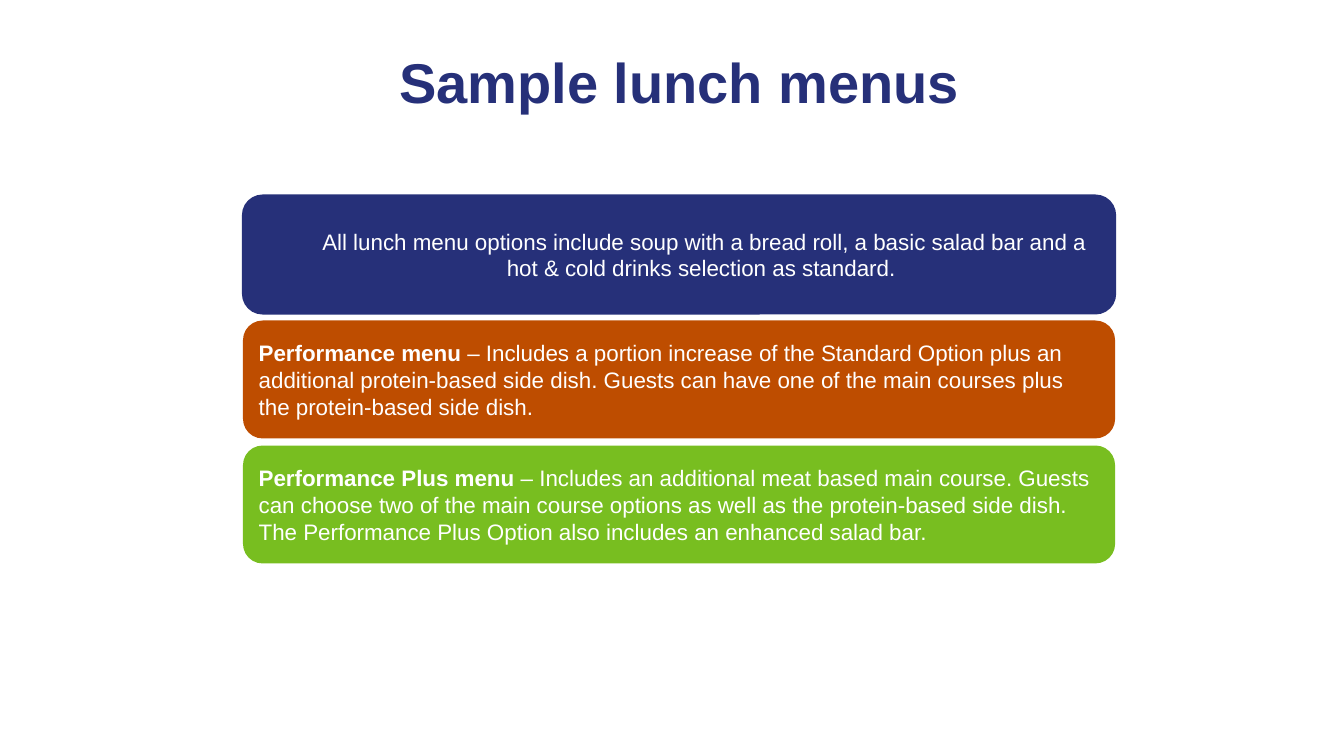
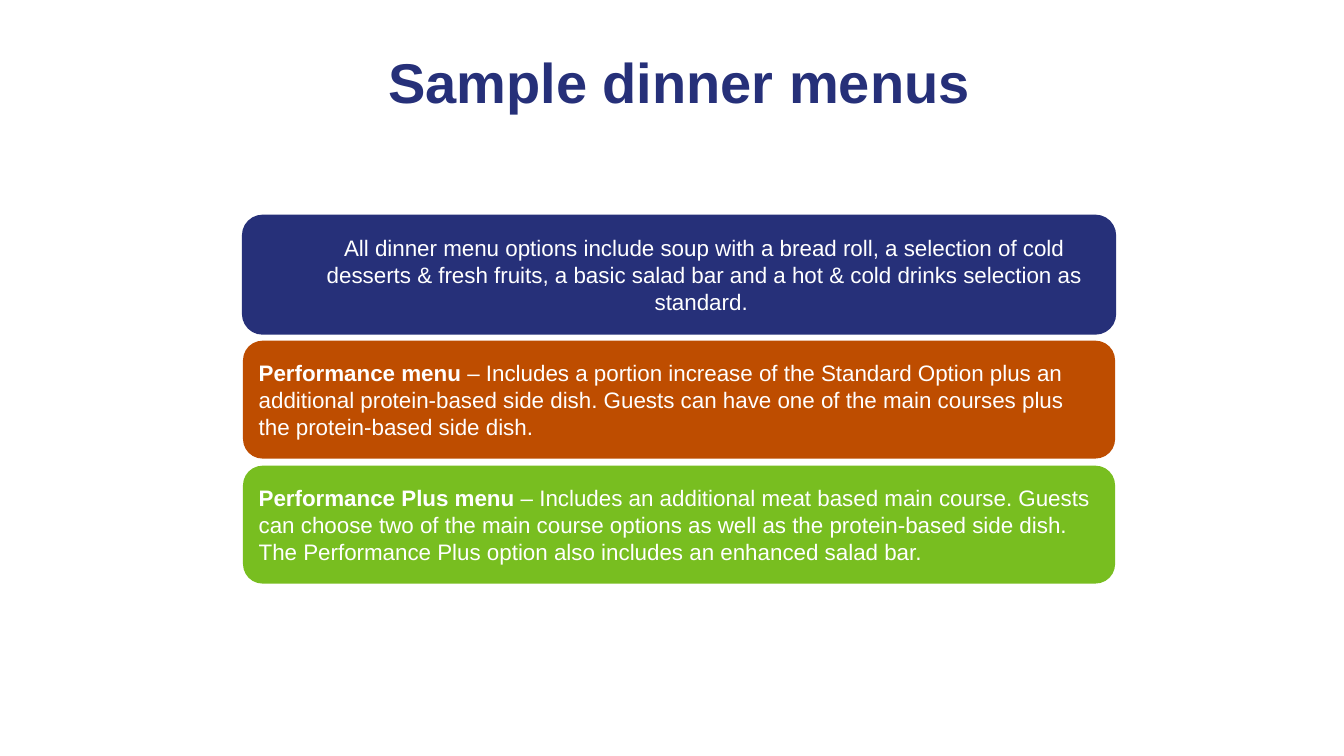
from pptx import Presentation
from pptx.dml.color import RGBColor
from pptx.enum.shapes import MSO_SHAPE
from pptx.enum.text import MSO_ANCHOR, PP_ALIGN
from pptx.util import Inches, Pt

NAVY, ORANGE, GREEN, WHITE = "263079", "BE4D00", "78BE20", "FFFFFF"
FONT = "Arial"

PERFORMANCE = [
    ("Performance menu ", True),
    ("– Includes a portion increase of the Standard Option plus an additional "
     "protein-based side dish. Guests can have one of the main courses plus the "
     "protein-based side dish.", False),
]
PERFORMANCE_PLUS = (
    "– Includes an additional meat based main course. Guests can choose two of the "
    "main course options as well as the protein-based side dish. The Performance "
    "Plus {option} also includes an enhanced salad bar."
)
MENUS = [
    {"title": "Sample lunch menus", "top": 1.94, "option": "Option",
     "intro": "All lunch menu options include soup with a bread roll, a basic salad "
              "bar and a hot & cold drinks selection as standard. "},
    {"title": "Sample dinner menus", "top": 2.14, "option": "option",
     "intro": "All dinner menu options include soup with a bread roll, a selection of "
              "cold desserts & fresh fruits, a basic salad bar and a hot & cold drinks "
              "selection as standard. "},
]

LEFT, WIDTH = 2.41, 8.65
TITLE_TOP, TITLE_HEIGHT = 0.42, 0.77
BAND_HEIGHT, BAND_GAP = 1.17, 0.07
INTRO_INDENT = 0.6


def rgb(color):
    return RGBColor.from_string(color)


def write(frame, runs, size=16, color=WHITE, align=PP_ALIGN.LEFT):
    """Fill a text frame with one paragraph of (text, bold) runs."""
    frame.word_wrap = True
    paragraph = frame.paragraphs[0]
    paragraph.alignment = align
    for text, bold in runs:
        run = paragraph.add_run()
        run.text = text
        run.font.name = FONT
        run.font.size = Pt(size)
        run.font.bold = bold
        run.font.color.rgb = rgb(color)


def add_title(slide, title):
    box = slide.shapes.add_textbox(
        Inches(LEFT), Inches(TITLE_TOP), Inches(WIDTH), Inches(TITLE_HEIGHT))
    write(box.text_frame, [(title, True)], size=40, color=NAVY, align=PP_ALIGN.CENTER)


def add_band(slide, top, fill, runs, align=PP_ALIGN.LEFT):
    band = slide.shapes.add_shape(
        MSO_SHAPE.ROUNDED_RECTANGLE,
        Inches(LEFT), Inches(top), Inches(WIDTH), Inches(BAND_HEIGHT))
    band.shadow.inherit = False
    band.fill.solid()
    band.fill.fore_color.rgb = rgb(fill)
    band.line.fill.background()
    band.text_frame.vertical_anchor = MSO_ANCHOR.MIDDLE
    write(band.text_frame, runs, align=align)
    return band


def add_menu_slide(deck, menu):
    slide = deck.slides.add_slide(deck.slide_layouts[6])
    plus = [("Performance Plus menu ", True),
            (PERFORMANCE_PLUS.format(option=menu["option"]), False)]
    intro_top, performance_top, plus_top = (
        menu["top"] + row * (BAND_HEIGHT + BAND_GAP) for row in range(3))

    intro = add_band(slide, intro_top, NAVY, [(menu["intro"], False)], PP_ALIGN.CENTER)
    intro.line.color.rgb = rgb(NAVY)
    intro.line.width = Pt(1.5)
    intro.text_frame.margin_left = Inches(INTRO_INDENT)

    add_band(slide, performance_top, ORANGE, PERFORMANCE)
    add_band(slide, plus_top, GREEN, plus)
    add_title(slide, menu["title"])


def main():
    deck = Presentation()
    deck.slide_width, deck.slide_height = Inches(13.33), Inches(7.5)
    for menu in MENUS:
        add_menu_slide(deck, menu)
    deck.save("out.pptx")


if __name__ == "__main__":
    main()
